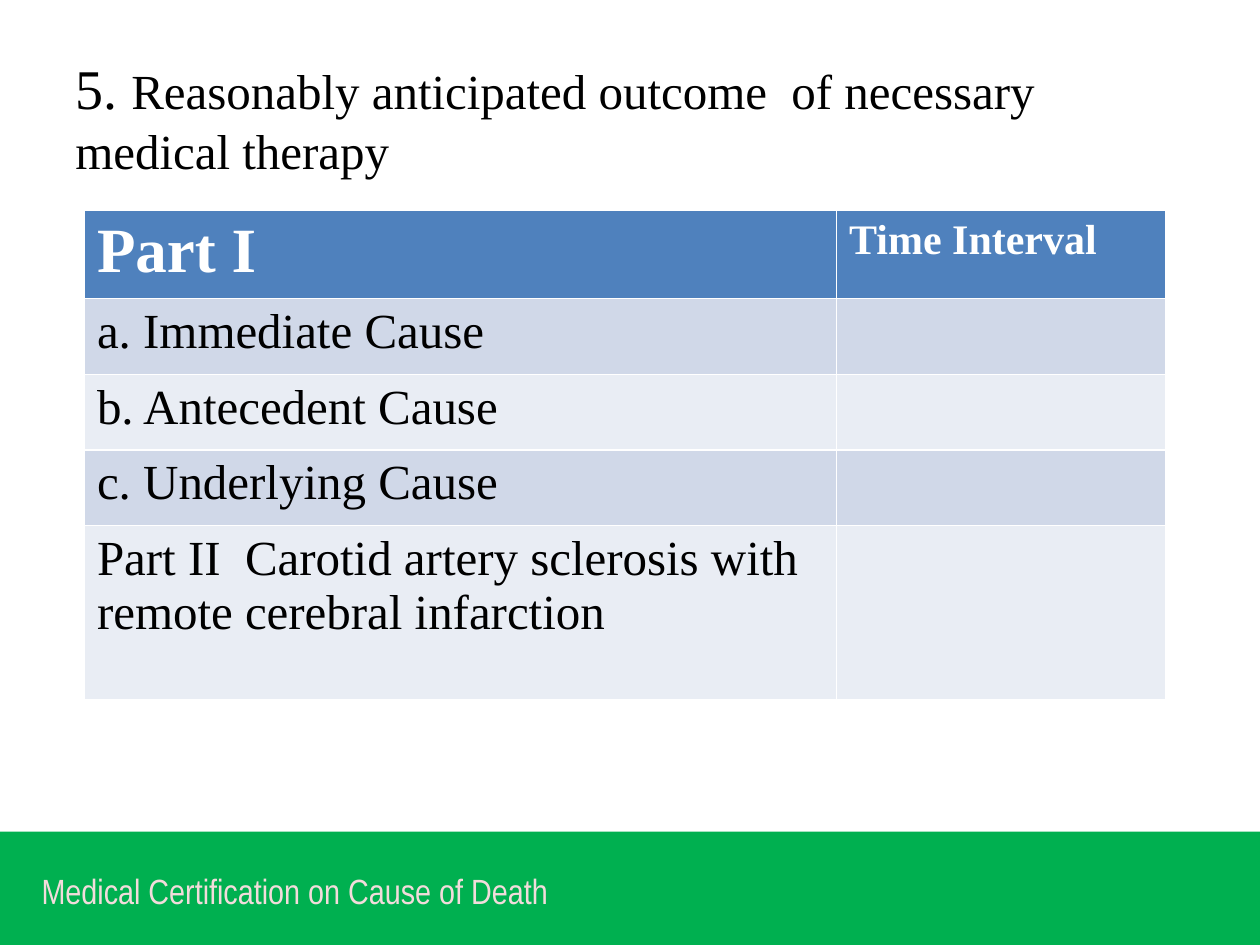
from dataclasses import dataclass
from pptx import Presentation
from pptx.dml.color import RGBColor
from pptx.enum.shapes import MSO_SHAPE
from pptx.enum.text import MSO_ANCHOR
from pptx.util import Inches, Pt


@dataclass(frozen=True)
class Theme:
    serif: str = "Times New Roman"
    narrow: str = "Arial Narrow"
    black: str = "000000"
    white: str = "FFFFFF"
    green: str = "00B050"
    pink: str = "F2DCDB"
    blue: str = "4F81BD"
    bands: tuple = ("D0D8E8", "E9EDF4")
    foot: int = 20
    side: int = 24
    body: int = 28
    lead: int = 32
    head: int = 36


theme = Theme()


def write(frame, text, size=theme.body, color=theme.black, face=theme.serif, bold=False):
    run = frame.paragraphs[0].add_run()
    run.text = text
    run.font.size = Pt(size)
    run.font.name = face
    run.font.bold = bold
    run.font.color.rgb = RGBColor.from_string(color)


def paint(item, color):
    item.fill.solid()
    item.fill.fore_color.rgb = RGBColor.from_string(color)


deck = Presentation()
deck.slide_width = Inches(10)
deck.slide_height = Inches(7.5)
slide = deck.slides.add_slide(deck.slide_layouts[6])
shapes = slide.shapes

band = shapes.add_shape(MSO_SHAPE.RECTANGLE, 0, Inches(6.6), Inches(10), Inches(0.9))
band.shadow.inherit = False
band.line.fill.background()
paint(band, theme.green)

foot = shapes.add_textbox(Inches(0.33), Inches(6.85), Inches(5.17), Inches(0.47)).text_frame
foot.word_wrap = True
foot.margin_left = foot.margin_right = foot.margin_bottom = 0
foot.margin_top = Inches(0.05)
write(foot, "Medical Certification on Cause of Death", size=theme.foot,
      color=theme.pink, face=theme.narrow)

title = shapes.add_textbox(Inches(0.5), Inches(0.3), Inches(9), Inches(1.25)).text_frame
title.word_wrap = True
title.vertical_anchor = MSO_ANCHOR.MIDDLE
write(title, "5. ", size=theme.lead)
write(title, "Reasonably anticipated outcome  of necessary medical therapy")

causes = [
    "a. Immediate Cause",
    "b. Antecedent Cause",
    "c. Underlying Cause",
    "Part II  Carotid artery sclerosis with remote cerebral infarction",
]
highs = [0.64, 0.6, 0.6, 0.6, 1.38]
wides = [5.97, 2.61]
table = shapes.add_table(len(highs), len(wides), Inches(0.67), Inches(1.67),
                         Inches(sum(wides)), Inches(sum(highs))).table
for row, high in zip(table.rows, highs):
    row.height = Inches(high)
for col, wide in zip(table.columns, wides):
    col.width = Inches(wide)

heads = [("Part I", theme.head), ("Time Interval", theme.side)]
for cell, (text, size) in zip(table.rows[0].cells, heads):
    paint(cell, theme.blue)
    write(cell.text_frame, text, size=size, color=theme.white, bold=True)

for i, cause in enumerate(causes):
    for cell in table.rows[i + 1].cells:
        paint(cell, theme.bands[i % 2])
    write(table.cell(i + 1, 0).text_frame, cause)

deck.save("out.pptx")
